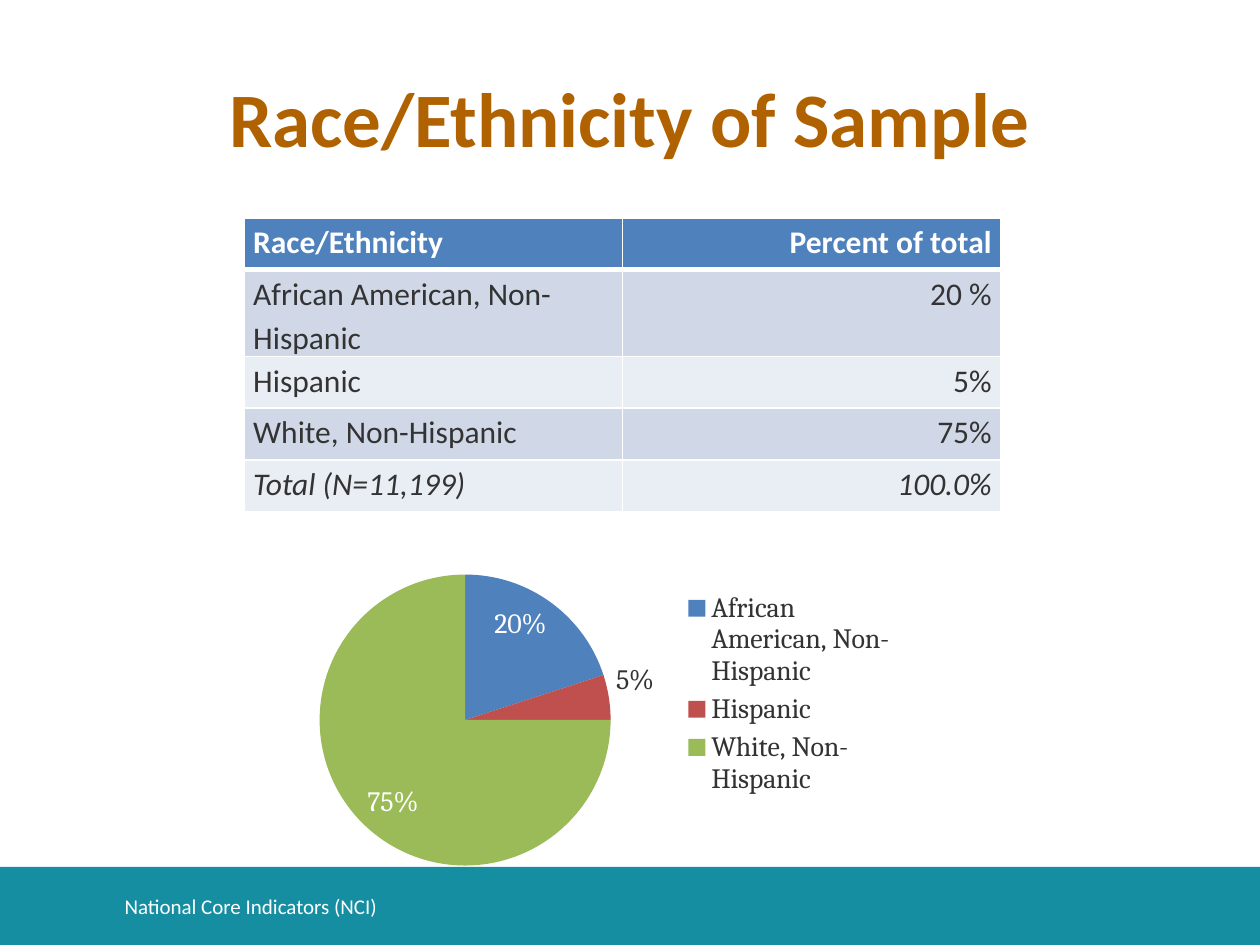
from lxml import etree
from pptx import Presentation
from pptx.chart.data import CategoryChartData
from pptx.dml.color import RGBColor
from pptx.enum.chart import XL_CHART_TYPE, XL_LABEL_POSITION, XL_LEGEND_POSITION
from pptx.enum.shapes import MSO_SHAPE
from pptx.enum.text import MSO_ANCHOR, PP_ALIGN
from pptx.oxml import parse_xml
from pptx.oxml.ns import nsdecls, qn
from pptx.util import Inches, Pt

LEFT, CENTER, RIGHT = PP_ALIGN.LEFT, PP_ALIGN.CENTER, PP_ALIGN.RIGHT
MIDDLE = MSO_ANCHOR.MIDDLE
RECTANGLE = MSO_SHAPE.RECTANGLE
PIE = XL_CHART_TYPE.PIE
LEGEND_RIGHT = XL_LEGEND_POSITION.RIGHT
INSIDE_END, OUTSIDE_END = XL_LABEL_POSITION.INSIDE_END, XL_LABEL_POSITION.OUTSIDE_END

COLORS = {
    "white": "FFFFFF", "text": "333333", "title": "B06100", "footer": "168EA2",
    "blue": "4F81BD", "red": "C0504D", "green": "9BBB59",
    "band_dark": "D0D8E8", "band_light": "E9EDF4",
}
ROWS = [
    ("Race/Ethnicity", "Percent of total"),
    ("African American, Non-Hispanic", "20 %"),
    ("Hispanic", "5%"),
    ("White, Non-Hispanic", "75%"),
    ("Total (N=11,199)", "100.0%"),
]
SHARES = (0.2, 0.05, 0.75)


def rgb(name):
    """Return the named colour."""
    return RGBColor.from_string(COLORS[name])


def style_font(font, size, color, name="Calibri", bold=False, italic=False):
    """Set the look of a font."""
    font.name, font.size = name, Pt(size)
    font.bold, font.italic = bold, italic
    font.color.rgb = rgb(color)


def write_text(frame, text, align=LEFT, line_spacing=None, **font_format):
    """Write one formatted paragraph into a text frame."""
    paragraph = frame.paragraphs[0]
    paragraph.alignment = align
    paragraph.line_spacing = line_spacing
    run = paragraph.add_run()
    run.text = text
    style_font(run.font, **font_format)


def add_text(slide, box, text, **text_format):
    """Add a wrapped, vertically centred text box."""
    frame = slide.shapes.add_textbox(*map(Inches, box)).text_frame
    frame.word_wrap = True
    frame.vertical_anchor = MIDDLE
    write_text(frame, text, **text_format)


def add_footer(slide, box):
    """Add the coloured band with the organisation name."""
    left, top, width, height = box
    band = slide.shapes.add_shape(RECTANGLE, *map(Inches, box))
    band.shadow.inherit = False
    band.fill.solid()
    band.fill.fore_color.rgb = rgb("footer")
    band.line.fill.background()
    add_text(slide, (left + 0.89, top + 0.11, 7.4, 0.4),
             "National Core Indicators (NCI)", size=12, color="white")


def set_borders(cell, **widths):
    """Give a cell white borders of the given point widths."""
    properties = cell._tc.get_or_add_tcPr()
    for index, side in enumerate("LRTB"):
        line = parse_xml(
            f'<a:ln{side} {nsdecls("a")} w="{Pt(widths.get(side, 1))}"><a:solidFill>'
            f'<a:srgbClr val="{COLORS["white"]}"/></a:solidFill></a:ln{side}>')
        properties.insert(index, line)


def add_share_table(slide, box):
    """Add the table of groups and their shares."""
    left, top, width, height = map(Inches, box)
    table = slide.shapes.add_table(len(ROWS), 2, left, top, width, height).table
    for row_index, values in enumerate(ROWS):
        header = row_index == 0
        table.rows[row_index].height = Inches(0.41)
        fill = "blue" if header else "band_dark" if row_index % 2 else "band_light"
        borders = {"B": 3} if header else {"T": 3} if row_index == 1 else {}
        for column, text in enumerate(values):
            cell = table.cell(row_index, column)
            cell.margin_left = cell.margin_right = Inches(0.07)
            cell.margin_top = cell.margin_bottom = 0
            cell.fill.solid()
            cell.fill.fore_color.rgb = rgb(fill)
            set_borders(cell, **borders)
            write_text(cell.text_frame, text, align=RIGHT if column else LEFT,
                       line_spacing=1.15, size=18, bold=header,
                       color="white" if header else "text",
                       italic=row_index == len(ROWS) - 1)


def set_layout(element, x, y, width, height, inner=False):
    """Place a chart part by fractions of the chart area."""
    for old in element.findall(qn("c:layout")):
        element.remove(old)
    layout = etree.Element(qn("c:layout"))
    manual = etree.SubElement(layout, qn("c:manualLayout"))
    values = {"xMode": "edge", "yMode": "edge", "x": x, "y": y, "w": width, "h": height}
    if inner:
        values = {"layoutTarget": "inner", **values}
    for tag, value in values.items():
        etree.SubElement(manual, qn(f"c:{tag}")).set("val", str(value))
    position = element.find(qn("c:legendPos"))
    if position is None:
        element.insert(0, layout)
    else:
        position.addnext(layout)


def add_share_chart(slide, box):
    """Add the pie of shares with its legend."""
    data = CategoryChartData(number_format="0%")
    data.categories = [row[0] for row in ROWS[1:-1]]
    data.add_series("Series 1", SHARES)
    chart = slide.shapes.add_chart(PIE, *map(Inches, box), data).chart
    chart.has_title = False
    style_font(chart.font, 10, "text", name="Cambria")
    chart.has_legend = True
    chart.legend.position = LEGEND_RIGHT
    chart.legend.include_in_layout = False
    style_font(chart.legend.font, 16, "text", name="Cambria")
    set_layout(chart.legend._element, 0.64, 0.22, 0.34, 0.57)

    plot = chart.plots[0]
    plot.vary_by_categories = True
    set_layout(chart._chartSpace.chart.plotArea, 0.07, 0.19, 0.46, 0.77, inner=True)
    series = plot.series[0]
    labels = series.data_labels
    labels.show_value = True
    labels.show_percentage = False
    labels.number_format = "0%"
    labels.number_format_is_linked = False
    labels.position = INSIDE_END
    style_font(labels.font, 16, "white", name="Cambria")
    for index, color in enumerate(("blue", "red", "green")):
        fill = series.points[index].format.fill
        fill.solid()
        fill.fore_color.rgb = rgb(color)
    small_label = series.points[1].data_label
    style_font(small_label.font, 16, "text", name="Cambria")
    small_label.position = OUTSIDE_END


def main():
    """Build and save the slide."""
    presentation = Presentation()
    presentation.slide_width, presentation.slide_height = Inches(10), Inches(7.5)
    slide = presentation.slides.add_slide(presentation.slide_layouts[6])
    add_footer(slide, (0, 6.88, 10, 0.62))
    add_text(slide, (0.5, 0.3, 9, 1.25), "Race/Ethnicity of Sample",
             align=CENTER, size=44, color="title", bold=True)
    add_share_table(slide, (1.94, 1.73, 6, 2.05))
    add_share_chart(slide, (2.18, 3.99, 5.04, 3))
    presentation.save("out.pptx")


if __name__ == "__main__":
    main()
